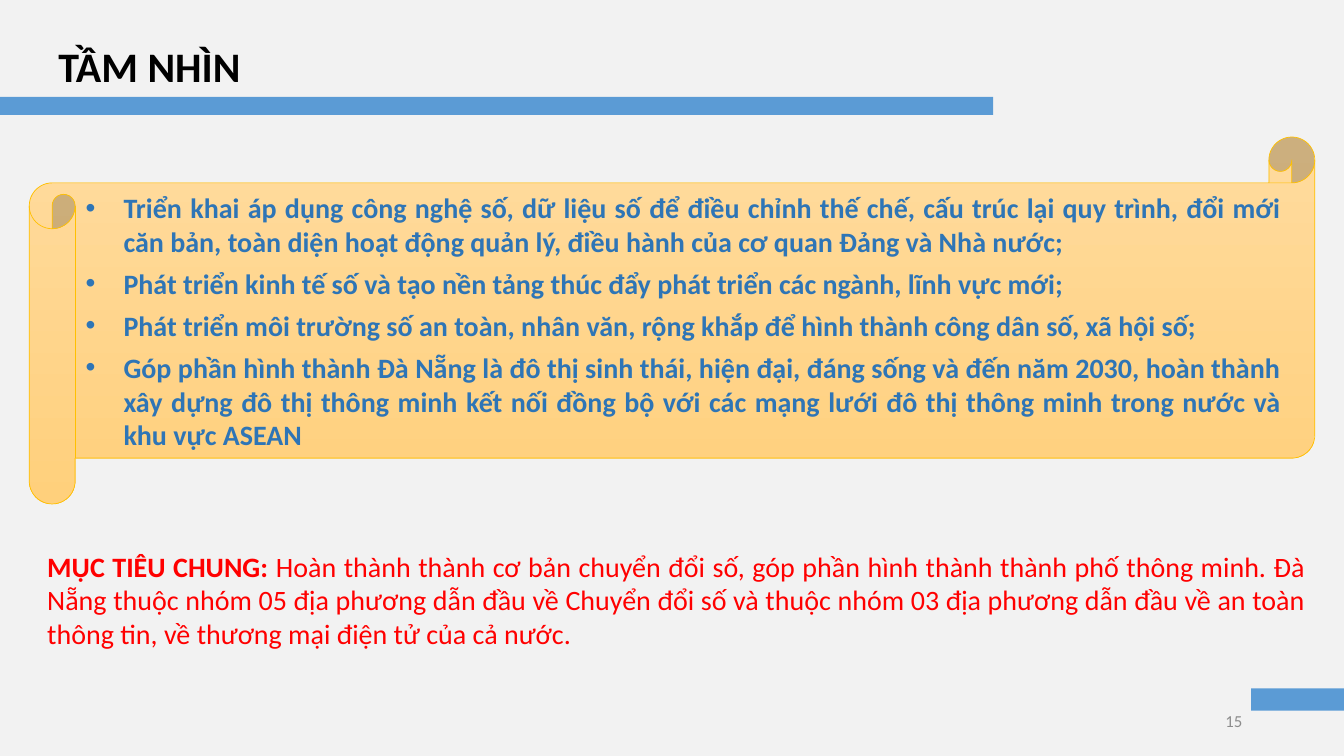
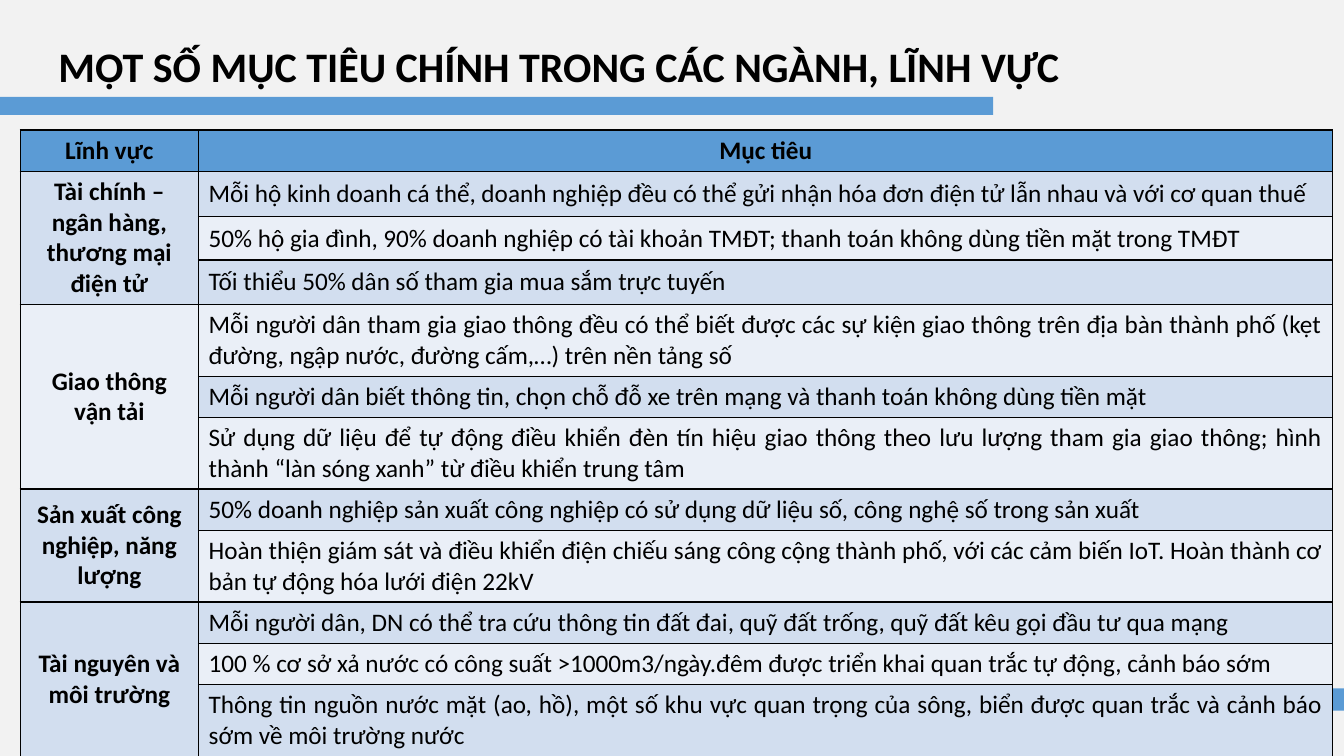
from lxml import etree
from pptx import Presentation
from pptx.dml.color import RGBColor
from pptx.enum.shapes import MSO_SHAPE
from pptx.enum.text import MSO_ANCHOR, MSO_AUTO_SIZE, PP_ALIGN
from pptx.oxml.ns import qn
from pptx.util import Emu, Pt

EMU_PER_PX = 9144  # 100 px to the inch
FONT = "Calibri"
RECTANGLE, SCROLL = MSO_SHAPE.RECTANGLE, MSO_SHAPE.HORIZONTAL_SCROLL
TOP, MIDDLE = MSO_ANCHOR.TOP, MSO_ANCHOR.MIDDLE
LEFT, CENTER, RIGHT, JUSTIFY = (
    PP_ALIGN.LEFT, PP_ALIGN.CENTER, PP_ALIGN.RIGHT, PP_ALIGN.JUSTIFY)
NO_AUTOFIT = MSO_AUTO_SIZE.NONE
TITLE_AND_BODY, TITLE_ONLY = 1, 5

BACKGROUND = RGBColor(0xF2, 0xF2, 0xF2)
BLUE = RGBColor(0x5B, 0x9B, 0xD5)
DARK_BLUE = RGBColor(0x2E, 0x75, 0xB6)
BLACK = RGBColor(0, 0, 0)
GREY = RGBColor(0x8C, 0x8C, 0x8C)
RED = RGBColor(0xFF, 0, 0)
GOLD = RGBColor(0xFF, 0xC0, 0)
SCROLL_TOP = RGBColor(0xFF, 0xDB, 0x9E)
SCROLL_BOTTOM = RGBColor(0xFF, 0xD0, 0x7C)
ROW_FILLS = (RGBColor(0xEA, 0xEF, 0xF7), RGBColor(0xD2, 0xDE, 0xEF))

TITLE_FONT = {"size": Pt(30), "bold": True, "color": BLACK}
LIST_FONT = {"size": Pt(20), "bold": True, "color": DARK_BLUE}
GOAL_FONT = {"size": Pt(20), "bold": False, "color": RED}
GOAL_LABEL_FONT = {**GOAL_FONT, "bold": True}
NUMBER_FONT = {"size": Pt(12), "bold": False, "color": GREY}
CELL_FONT = {"size": Pt(18), "bold": False, "color": BLACK}
HEAD_FONT = {**CELL_FONT, "bold": True}
SPACED = {"alignment": JUSTIFY, "space_before": Pt(3), "space_after": Pt(3)}

VISION = [
    "Triển khai áp dụng công nghệ số, dữ liệu số để điều chỉnh thế chế, cấu trúc lại quy trình, "
    "đổi mới căn bản, toàn diện hoạt động quản lý, điều hành của cơ quan Đảng và Nhà nước;",
    "Phát triển kinh tế số và tạo nền tảng thúc đẩy phát triển các ngành, lĩnh vực mới;",
    "Phát triển môi trường số an toàn, nhân văn, rộng khắp để hình thành công dân số, xã hội số;",
    "Góp phần hình thành Đà Nẵng là đô thị sinh thái, hiện đại, đáng sống và đến năm 2030, "
    "hoàn thành xây dựng đô thị thông minh kết nối đồng bộ với các mạng lưới đô thị thông minh "
    "trong nước và khu vực ASEAN",
]
GENERAL_GOAL = (
    "Hoàn thành thành cơ bản chuyển đổi số, góp phần hình thành thành phố thông minh. "
    "Đà Nẵng thuộc nhóm 05 địa phương dẫn đầu về Chuyển đổi số và thuộc nhóm 03 địa phương "
    "dẫn đầu về an toàn thông tin, về thương mại điện tử của cả nước."
)
SECTOR_GOALS = [
    ("Tài chính – ngân hàng, thương mại điện tử", [
        "Mỗi hộ kinh doanh cá thể, doanh nghiệp đều có thể gửi nhận hóa đơn điện tử lẫn nhau "
        "và với cơ quan thuế",
        "50% hộ gia đình, 90% doanh nghiệp có tài khoản TMĐT; thanh toán không dùng tiền mặt "
        "trong TMĐT",
        "Tối thiểu 50% dân số tham gia mua sắm trực tuyến",
    ]),
    ("Giao thông vận tải", [
        "Mỗi người dân tham gia giao thông đều có thể biết được các sự kiện giao thông trên "
        "địa bàn thành phố (kẹt đường, ngập nước, đường cấm,…) trên nền tảng số",
        "Mỗi người dân biết thông tin, chọn chỗ đỗ xe trên mạng và thanh toán không dùng tiền mặt",
        "Sử dụng dữ liệu để tự động điều khiển đèn tín hiệu giao thông theo lưu lượng tham gia "
        "giao thông; hình thành “làn sóng xanh” từ điều khiển trung tâm",
    ]),
    ("Sản xuất công nghiệp, năng lượng", [
        "50% doanh nghiệp sản xuất công nghiệp có sử dụng dữ liệu số, công nghệ số trong sản xuất",
        "Hoàn thiện giám sát và điều khiển điện chiếu sáng công cộng thành phố, với các cảm biến "
        "IoT. Hoàn thành cơ bản tự động hóa lưới điện 22kV",
    ]),
    ("Tài nguyên và môi trường", [
        "Mỗi người dân, DN có thể tra cứu thông tin đất đai, quỹ đất trống, quỹ đất kêu gọi "
        "đầu tư qua mạng",
        "100 % cơ sở xả nước có công suất >1000m3/ngày.đêm được triển khai quan trắc tự động, "
        "cảnh báo sớm",
        "Thông tin nguồn nước mặt (ao, hồ), một số khu vực quan trọng của sông, biển được quan "
        "trắc và cảnh báo sớm về môi trường nước",
    ]),
]
COLUMN_WIDTHS = (177, 1125)
ROW_HEIGHTS = (41, 45, 43, 41, 70, 41, 70, 41, 70, 41, 41, 70)


def px(*lengths):
    return [Emu(length * EMU_PER_PX) for length in lengths]


def set_attributes(target, values):
    for name, value in values.items():
        setattr(target, name, value)


def write(paragraph, runs, **layout):
    """Fill a paragraph with (text, font values) runs."""
    set_attributes(paragraph, layout)
    for text, font_values in runs:
        run = paragraph.add_run()
        run.text = text
        values = dict(font_values)
        run.font.color.rgb = values.pop("color")
        set_attributes(run.font, {"name": FONT, **values})


class Deck:
    def __init__(self):
        self.presentation = Presentation()
        width, height = px(1333, 750)
        set_attributes(self.presentation, {"slide_width": width, "slide_height": height})
        background = self.presentation.slide_master.background.fill
        background.solid()
        background.fore_color.rgb = BACKGROUND
        self.slide = None

    def new_slide(self, layout, title):
        self.slide = self.presentation.slides.add_slide(
            self.presentation.slide_layouts[layout])
        self.band(1241, 683, 92, 22)
        frame = self.place(self.slide.shapes.title, (48, 35, 1141, 61), MIDDLE)
        write(frame.paragraphs[0], [(title, TITLE_FONT)], alignment=LEFT)
        self.band(0, 96, 985, 18)

    def place(self, shape, box, anchor):
        """Set a text shape's box and return its wrapping text frame."""
        set_attributes(shape, dict(zip(("left", "top", "width", "height"), px(*box))))
        frame = shape.text_frame
        set_attributes(frame, {"word_wrap": True, "auto_size": NO_AUTOFIT,
                               "vertical_anchor": anchor})
        return frame

    def shape(self, kind, box):
        shape = self.slide.shapes.add_shape(kind, *px(*box))
        shape.shadow.inherit = False
        return shape

    def band(self, *box):
        band = self.shape(RECTANGLE, box)
        band.fill.solid()
        band.fill.fore_color.rgb = BLUE
        band.line.fill.background()

    def scroll(self, *box):
        """Draw a scroll behind the placeholders."""
        scroll = self.shape(SCROLL, box)
        scroll.fill.gradient()
        scroll.fill.gradient_angle = 270
        for stop, color in zip(scroll.fill.gradient_stops, (SCROLL_TOP, SCROLL_BOTTOM)):
            stop.color.rgb = color
        scroll.line.color.rgb = GOLD
        scroll.line.width = Pt(0.5)
        self.slide.shapes._spTree.insert(2, scroll._element)

    def bullets(self, items, *box):
        frame = self.place(self.slide.placeholders[1], box, MIDDLE)
        for index, item in enumerate(items):
            paragraph = frame.add_paragraph() if index else frame.paragraphs[0]
            write(paragraph, [(item, LIST_FONT)], **SPACED)

    def text(self, runs, box, anchor=TOP, **layout):
        shape = self.slide.shapes.add_textbox(*px(*box))
        write(self.place(shape, box, anchor).paragraphs[0], runs, **layout)

    def cell(self, cell, text, fill, font_values, alignment):
        properties = cell._tc.get_or_add_tcPr()
        for side in ("lnL", "lnR", "lnT", "lnB"):
            border = etree.SubElement(properties, qn(f"a:{side}"), w=str(Pt(1)))
            solid = etree.SubElement(border, qn("a:solidFill"))
            etree.SubElement(solid, qn("a:srgbClr"), val=str(BLACK))
        cell.fill.solid()
        cell.fill.fore_color.rgb = fill
        cell.vertical_anchor = MIDDLE
        if text:
            write(cell.text_frame.paragraphs[0], [(text, font_values)], alignment=alignment)

    def goal_table(self, headings, groups, left, top):
        box = px(left, top, sum(COLUMN_WIDTHS), sum(ROW_HEIGHTS))
        table = self.slide.shapes.add_table(
            len(ROW_HEIGHTS), len(COLUMN_WIDTHS), *box).table
        for column, width in zip(table.columns, px(*COLUMN_WIDTHS)):
            column.width = width
        for row, height in zip(table.rows, px(*ROW_HEIGHTS)):
            row.height = height
        for column, heading in enumerate(headings):
            self.cell(table.cell(0, column), heading, BLUE, HEAD_FONT, CENTER)
        row = 1
        for sector, goals in groups:
            first = row
            for goal in goals:
                name = sector if row == first else ""
                self.cell(table.cell(row, 0), name, ROW_FILLS[first % 2], HEAD_FONT, CENTER)
                self.cell(table.cell(row, 1), goal, ROW_FILLS[row % 2], CELL_FONT, JUSTIFY)
                row += 1
            table.cell(first, 0).merge(table.cell(row - 1, 0))


def main():
    deck = Deck()
    deck.new_slide(TITLE_AND_BODY, "TẦM NHÌN")
    deck.scroll(29, 136, 1275, 364)
    deck.bullets(VISION, 75, 182, 1206, 273)
    deck.text([("MỤC TIÊU CHUNG: ", GOAL_LABEL_FONT), (GENERAL_GOAL, GOAL_FONT)],
              (37, 540, 1268, 111), **SPACED)
    deck.text([("15", NUMBER_FONT)], (942, 695, 300, 40), MIDDLE, alignment=RIGHT)

    deck.new_slide(TITLE_ONLY, "MỘT SỐ MỤC TIÊU CHÍNH TRONG CÁC NGÀNH, LĨNH VỰC")
    deck.goal_table(("Lĩnh vực", "Mục tiêu"), SECTOR_GOALS, 20, 129)
    deck.presentation.save("out.pptx")


if __name__ == "__main__":
    main()
